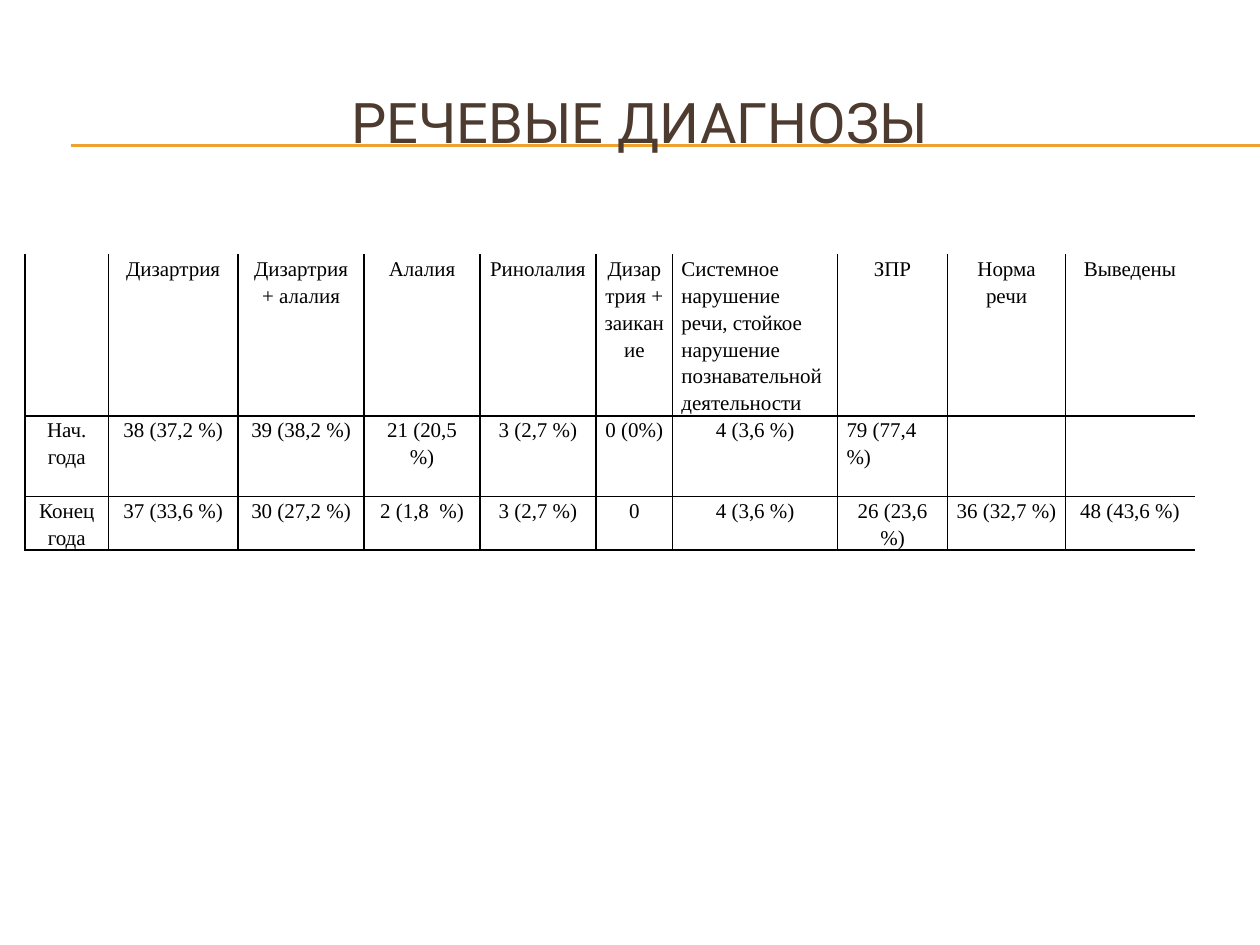
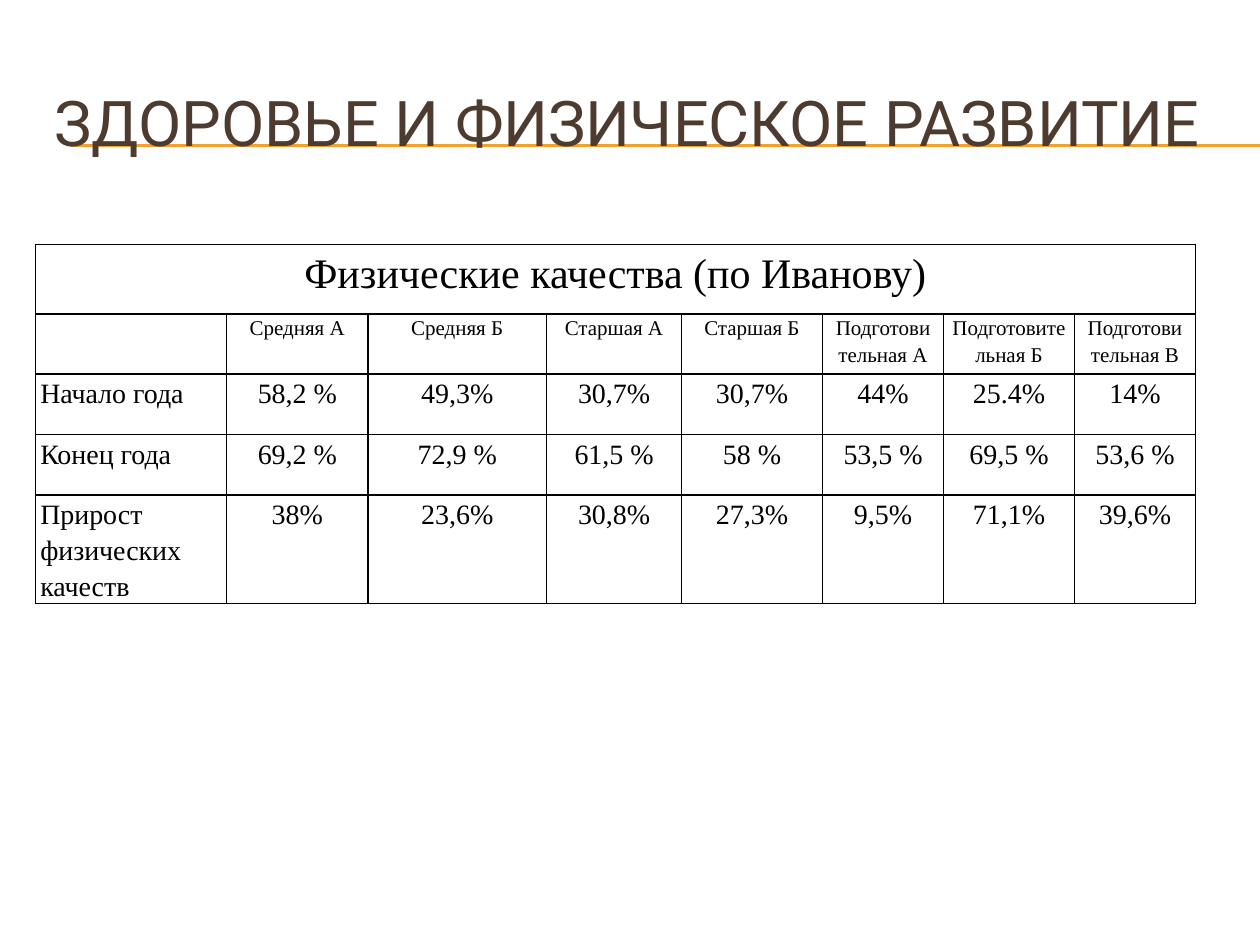
"""Builds two slides with tables on speech diagnoses and physical development."""
from lxml.etree import SubElement
from pptx import Presentation
from pptx.dml.color import RGBColor
from pptx.enum.shapes import MSO_CONNECTOR
from pptx.enum.text import MSO_ANCHOR, MSO_AUTO_SIZE, PP_ALIGN
from pptx.oxml import parse_xml
from pptx.oxml.ns import nsdecls, qn
from pptx.util import Inches, Pt

BROWN, GOLD, BLACK = "4E3B30", "F0A22E", "000000"
LEFT, CENTER, JUSTIFY = PP_ALIGN.LEFT, PP_ALIGN.CENTER, PP_ALIGN.JUSTIFY
WIDE, NARROW = 0.07, 0.04


def rgb(color):
    return RGBColor.from_string(color)


def add_borders(cell, sides):
    tc_pr = cell.fill._xPr
    for i, side in enumerate(sides):
        tc_pr.insert(i, parse_xml(
            f'<a:ln{side} {nsdecls("a")} w="12700"><a:solidFill>'
            f'<a:srgbClr val="{BLACK}"/></a:solidFill></a:ln{side}>'))


diagnoses = {
    "title": "РЕЧЕВЫЕ ДИАГНОЗЫ", "title_size": 32, "title_align": CENTER,
    "at": (0.2, 2.02),
    "cols": [0.66, 1.03, 1, 0.92, 0.92, 0.61, 1.31, 0.87, 0.94, 1.02],
    "heights": [1.28, 0.64, 0.42],
    "sizes": [12, 12, 12],
    "insets": [WIDE, WIDE, NARROW],
    "aligns": {(0, 6): LEFT, (1, 7): LEFT},
    "label_align": CENTER, "framed": False, "merged": False,
    "rows": [
        ["", "Дизартрия", "Дизартрия + алалия", "Алалия", "Ринолалия",
         "Дизартрия + заикание",
         "Системное нарушение речи, стойкое нарушение познавательной деятельности",
         "ЗПР", "Норма речи", "Выведены"],
        ["Нач. года", "38 (37,2 %)", "39 (38,2 %)", "21 (20,5 %)", "3 (2,7 %)",
         "0 (0%)", "4 (3,6 %)", "79 (77,4 %)", "", ""],
        ["Конец года", "37 (33,6 %)", "30 (27,2 %)", "2 (1,8  %)", "3 (2,7 %)",
         "0", "4 (3,6 %)", "26 (23,6 %)", "36 (32,7 %)", "48 (43,6 %)"],
    ],
}
fitness = {
    "title": "ЗДОРОВЬЕ И ФИЗИЧЕСКОЕ РАЗВИТИЕ", "title_size": 36, "title_align": LEFT,
    "at": (0.28, 1.94),
    "cols": [1.52, 1.12, 1.42, 1.07, 1.12, 0.96, 1.04, 0.96],
    "heights": [0.55, 0.48, 0.48, 0.48, 0.86],
    "sizes": [24, 12, 16, 16, 16],
    "insets": [NARROW, WIDE, NARROW, NARROW, NARROW],
    "aligns": {(0, 0): CENTER},
    "label_align": JUSTIFY, "framed": True, "merged": True,
    "rows": [
        ["Физические качества (по Иванову)"] + [""] * 7,
        ["", "Средняя А", "Средняя Б", "Старшая А", "Старшая Б",
         "Подготовительная А", "Подготовительная Б", "Подготовительная В"],
        ["Начало года", "58,2 %", "49,3%", "30,7%", "30,7%", "44%", "25.4%", "14%"],
        ["Конец года", "69,2 %", "72,9 %", "61,5 %", "58 %", "53,5 %", "69,5 %", "53,6 %"],
        ["Прирост физических качеств", "38%", "23,6%", "30,8%", "27,3%", "9,5%",
         "71,1%", "39,6%"],
    ],
}

prs = Presentation()
prs.slide_width, prs.slide_height = Inches(10), Inches(7.5)

for data in (diagnoses, fitness):
    s = prs.slides.add_slide(prs.slide_layouts[5])
    title = s.shapes.title
    title.left, title.top = Inches(0.33), Inches(0.5)
    title.width, title.height = Inches(9.5), Inches(0.92)
    tf = title.text_frame
    tf.text = data["title"]
    tf.auto_size = MSO_AUTO_SIZE.NONE
    tf.vertical_anchor = MSO_ANCHOR.MIDDLE
    p = tf.paragraphs[0]
    p.alignment = data["title_align"]
    p.font.name, p.font.size = "Roboto", Pt(data["title_size"])
    p.font.color.rgb = rgb(BROWN)

    for y in (1.15, 1.16):
        rule = s.shapes.add_connector(
            MSO_CONNECTOR.STRAIGHT, Inches(0.56), Inches(y), Inches(10), Inches(y))
        rule.line.color.rgb = rgb(GOLD)
        rule.line.width = Pt(0.75)
        SubElement(rule.element.spPr, qn("a:effectLst"))
        title.element.addprevious(rule.element)

    rows, cols, heights = data["rows"], data["cols"], data["heights"]
    x, y = data["at"]
    table = s.shapes.add_table(len(rows), len(cols), Inches(x), Inches(y),
                               Inches(sum(cols)), Inches(sum(heights))).table
    table.first_row = table.horz_banding = False
    for col, width in zip(table.columns, cols):
        col.width = Inches(width)
    for row, height in zip(table.rows, heights):
        row.height = Inches(height)
    if data["merged"]:
        table.cell(0, 0).merge(table.cell(0, len(cols) - 1))

    for i, row in enumerate(rows):
        for j, text in enumerate(row):
            cell = table.cell(i, j)
            cell.fill.background()
            sides = ["L", "R", "T", "B"]
            if not data["framed"] and i == 0:
                sides.remove("T")
            if not data["framed"] and j == len(cols) - 1:
                sides.remove("R")
            add_borders(cell, sides)
            inset = NARROW if j == 0 else data["insets"][i]
            cell.margin_left = cell.margin_right = Inches(inset)
            cell.margin_top = cell.margin_bottom = 0
            p = cell.text_frame.paragraphs[0]
            p.text = text
            p.line_spacing = 1.15
            default = data["label_align"] if j == 0 else CENTER
            p.alignment = data["aligns"].get((i, j), default)
            p.font.name, p.font.size = "Times New Roman", Pt(data["sizes"][i])
            p.font.color.rgb = rgb(BLACK)

prs.save("out.pptx")
